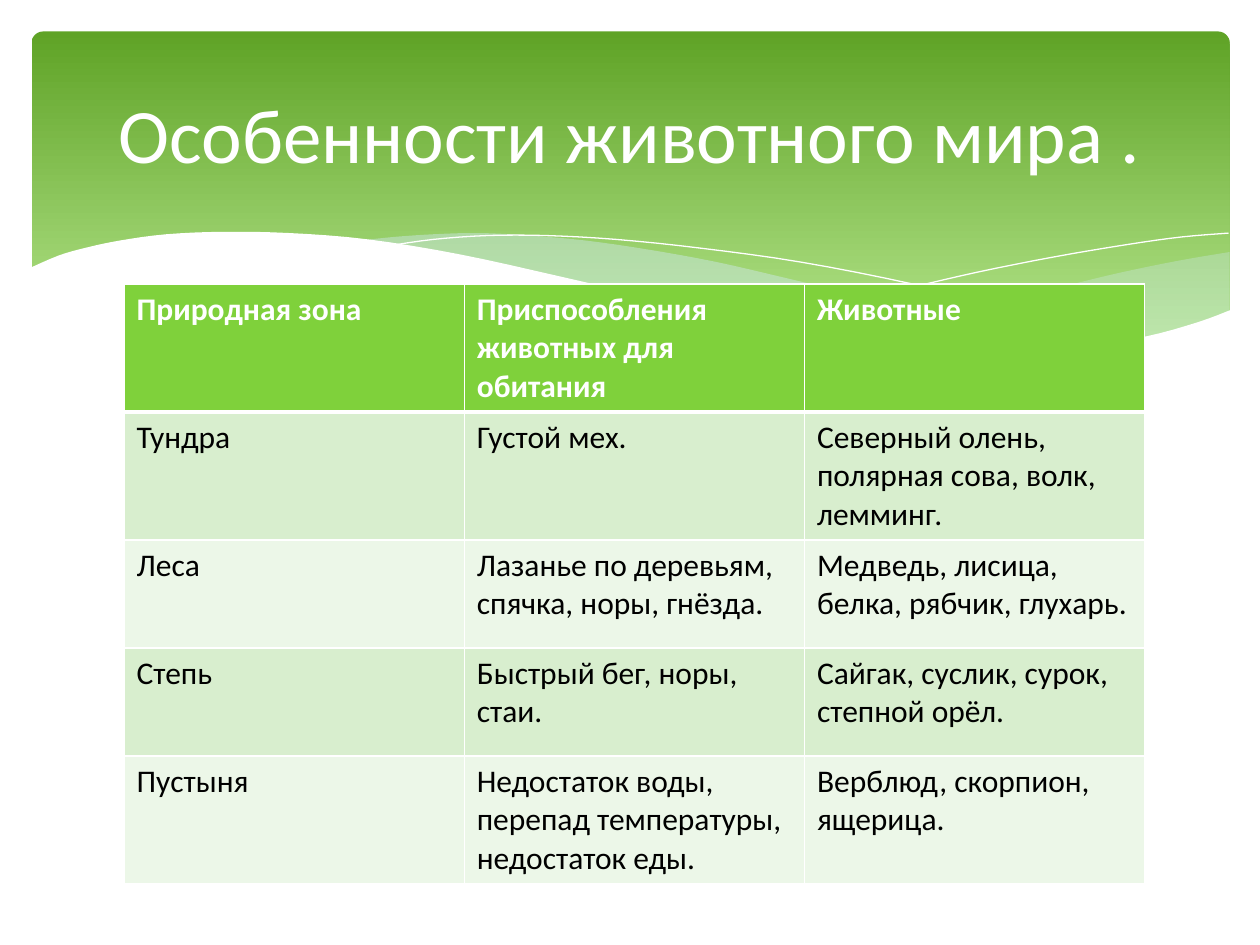
from dataclasses import dataclass

from lxml.etree import SubElement
from pptx import Presentation
from pptx.dml.color import RGBColor
from pptx.enum.shapes import MSO_SHAPE
from pptx.enum.text import MSO_ANCHOR, PP_ALIGN
from pptx.oxml import parse_xml
from pptx.oxml.ns import nsdecls, qn
from pptx.util import Pt


@dataclass(frozen=True)
class Theme:
    """Colours, font and type sizes of the slide."""
    face: str = "Calibri"
    white: str = "FFFFFF"
    black: str = "000000"
    dark: str = "5FA326"
    light: str = "B2E389"
    mist: str = "D6ECFF"
    head: str = "7FD13B"
    bands: tuple = ("D8EECE", "ECF7E8")
    title: int = 44
    body: int = 18


THEME = Theme()

RIGHT = [
    [(684.7, 126), (655.2, 131), (623.5, 137.5), (602, 142.6), (561.6, 152.6),
     (524.2, 160.6), (490.3, 167), (457.9, 172.8)],
    [(457.9, 172.8), (489.6, 177.1), (518.4, 180), (544.3, 181.4), (568.1, 182.2),
     (596.9, 180.7), (622.1, 177.8), (645.1, 172.8), (665.3, 167), (684.7, 159.8)],
]
MIDDLE = [
    [(625, 178.6), (584.6, 172.8), (540, 164.9), (490.3, 154.8), (434.9, 141.8),
     (391.7, 131.8), (352.1, 124.6), (316.8, 119.5), (284.4, 116.6),
     (255.6, 115.2), (229.7, 115.9), (207.4, 117.4), (187.9, 119.5)],
    [(187.9, 119.5), (228.2, 125.3), (257.8, 131), (305.3, 141.8), (363.6, 154.8),
     (414.7, 165.6), (460.8, 173.5), (501.8, 179.3), (538.6, 181.4),
     (571, 182.2), (599, 181.4), (625, 178.6)],
]
LONG = [
    [(204.5, 122.4), (229.7, 118.8), (260.6, 116.6), (293.8, 116.6),
     (334.1, 118.8), (382.3, 123.8), (439.9, 131.8), (505.4, 144.7),
     (580.3, 162.7), (635, 177.8)],
]
SHORT = [
    [(423.4, 167), (452.2, 159.1), (500.4, 146.9), (540.7, 137.5),
     (583.9, 128.9), (626.4, 121.7), (657.4, 117.4), (684, 115.2)],
]
FRONT = [
    [(685.4, 159.1), (666, 166.3), (637.2, 174.2), (603.4, 179.3), (564.5, 181.4),
     (517.7, 179.3), (463, 172.8), (416.2, 164.9), (362.9, 154.1),
     (303.8, 140.4), (244.8, 127.4), (192.2, 118.8), (147.6, 115.2),
     (109.4, 114.5), (77, 115.9), (50.4, 119.5), (30.2, 123.8),
     (15.1, 128.2), (-1.4, 135.4)],
    [(-1.4, 218.9), (685.4, 218.9)],
]
ROWS = [
    ("Природная зона", "Приспособления животных для обитания", "Животные"),
    ("Тундра", "Густой мех.", "Северный олень, полярная сова, волк, лемминг."),
    ("Леса", "Лазанье по деревьям, спячка, норы, гнёзда.",
     "Медведь, лисица, белка, рябчик, глухарь."),
    ("Степь", "Быстрый бег, норы, стаи.", "Сайгак, суслик, сурок, степной орёл."),
    ("Пустыня", "Недостаток воды, перепад температуры, недостаток еды.",
     "Верблюд, скорпион, ящерица."),
]


def rgb(code):
    """Turn a hex code into a colour."""
    return RGBColor.from_string(code)


def style(font, tint, **form):
    """Apply a colour and a dict of format values to a font."""
    for key, value in {"name": THEME.face, **form}.items():
        setattr(font, key, value)
    font.color.rgb = rgb(tint)


def smooth(knots, steps=4):
    """Return points on a Catmull-Rom curve through the knots."""
    if len(knots) < 3:
        return knots
    ends = [knots[0], *knots, knots[-1]]
    curve = [knots[0]]
    for a, b, c, d in zip(ends, ends[1:], ends[2:], ends[3:]):
        for step in range(1, steps + 1):
            t = step / steps
            curve.append(tuple(
                (2 * q + (r - p) * t + (2 * p - 5 * q + 4 * r - s) * t ** 2
                 + (3 * q - p - 3 * r + s) * t ** 3) / 2
                for p, q, r, s in zip(a, b, c, d)))
    return curve


def wave(slide, box, edges, tint, alpha=100, closed=True):
    """Draw a filled wave, or a hairline when it is open."""
    left, top = box[:2]
    dots = [(Pt(left + x), Pt(top + y)) for edge in edges for x, y in smooth(edge)]
    pen = slide.shapes.build_freeform(*dots[0])
    pen.add_line_segments(dots[1:], close=closed)
    shape = pen.convert_to_shape()
    shape.shadow.inherit = False
    if not closed:
        shape.fill.background()
        shape.line.color.rgb = rgb(tint)
        shape.line.width = Pt(0)
        return
    shape.line.fill.background()
    shape.fill.solid()
    shape.fill.fore_color.rgb = rgb(tint)
    if alpha < 100:
        node = shape.fill._xPr.find(".//" + qn("a:srgbClr"))
        SubElement(node, qn("a:alpha"), val=str(alpha * 1000))


def banner(slide, box):
    """Draw the green header panel with its waves."""
    panel = slide.shapes.add_shape(MSO_SHAPE.ROUNDED_RECTANGLE, *map(Pt, box))
    panel.adjustments[0] = 0.034
    panel.shadow.inherit = False
    panel.line.fill.background()
    panel.fill.gradient()
    panel.fill.gradient_angle = 270
    stops = zip(panel.fill.gradient_stops, (THEME.dark, THEME.light), (0, 0.9))
    for stop, tint, place in stops:
        stop.color.rgb = rgb(tint)
        stop.position = place
    wave(slide, box, RIGHT, THEME.mist, 29)
    wave(slide, box, MIDDLE, THEME.mist, 40)
    for edges in (LONG, SHORT):
        wave(slide, box, edges, THEME.white, closed=False)
    wave(slide, box, FRONT, THEME.white)


def title(slide, box, text):
    """Place the centred slide title."""
    frame = slide.shapes.add_textbox(*map(Pt, box)).text_frame
    frame.word_wrap = True
    frame.vertical_anchor = MSO_ANCHOR.MIDDLE
    para = frame.paragraphs[0]
    para.text = text
    para.alignment = PP_ALIGN.CENTER
    style(para.font, THEME.white, size=Pt(THEME.title))


def border(cell, **sides):
    """Give a cell white borders of the given widths."""
    props = cell._tc.get_or_add_tcPr()
    for spot, (side, width) in enumerate(sides.items()):
        props.insert(spot, parse_xml(
            f'<a:ln{side} {nsdecls("a")} w="{Pt(width)}"><a:solidFill>'
            f'<a:srgbClr val="{THEME.white}"/></a:solidFill></a:ln{side}>'))


def table(slide, box, rows):
    """Build the banded table of zones and animals."""
    grid = slide.shapes.add_table(len(rows), len(rows[0]), *map(Pt, box)).table
    for i, row in enumerate(rows):
        fill = THEME.bands[(i - 1) % 2] if i else THEME.head
        for j, text in enumerate(row):
            cell = grid.cell(i, j)
            cell.text = text
            cell.fill.solid()
            cell.fill.fore_color.rgb = rgb(fill)
            border(cell, L=1, R=1, T=3 if i == 1 else 1, B=1 if i else 3)
            style(cell.text_frame.paragraphs[0].font,
                  THEME.black if i else THEME.white,
                  size=Pt(THEME.body), bold=i == 0)


def main():
    """Build and save the slide."""
    deck = Presentation()
    deck.slide_width, deck.slide_height = Pt(720), Pt(540)
    slide = deck.slides.add_slide(deck.slide_layouts[6])
    banner(slide, (18, 18, 684.7, 194.4))
    table(slide, (70.9, 162.3, 583.2, 308.6), ROWS)
    title(slide, (36, 26.6, 648, 98.6), "Особенности животного мира .")
    deck.save("out.pptx")


if __name__ == "__main__":
    main()
